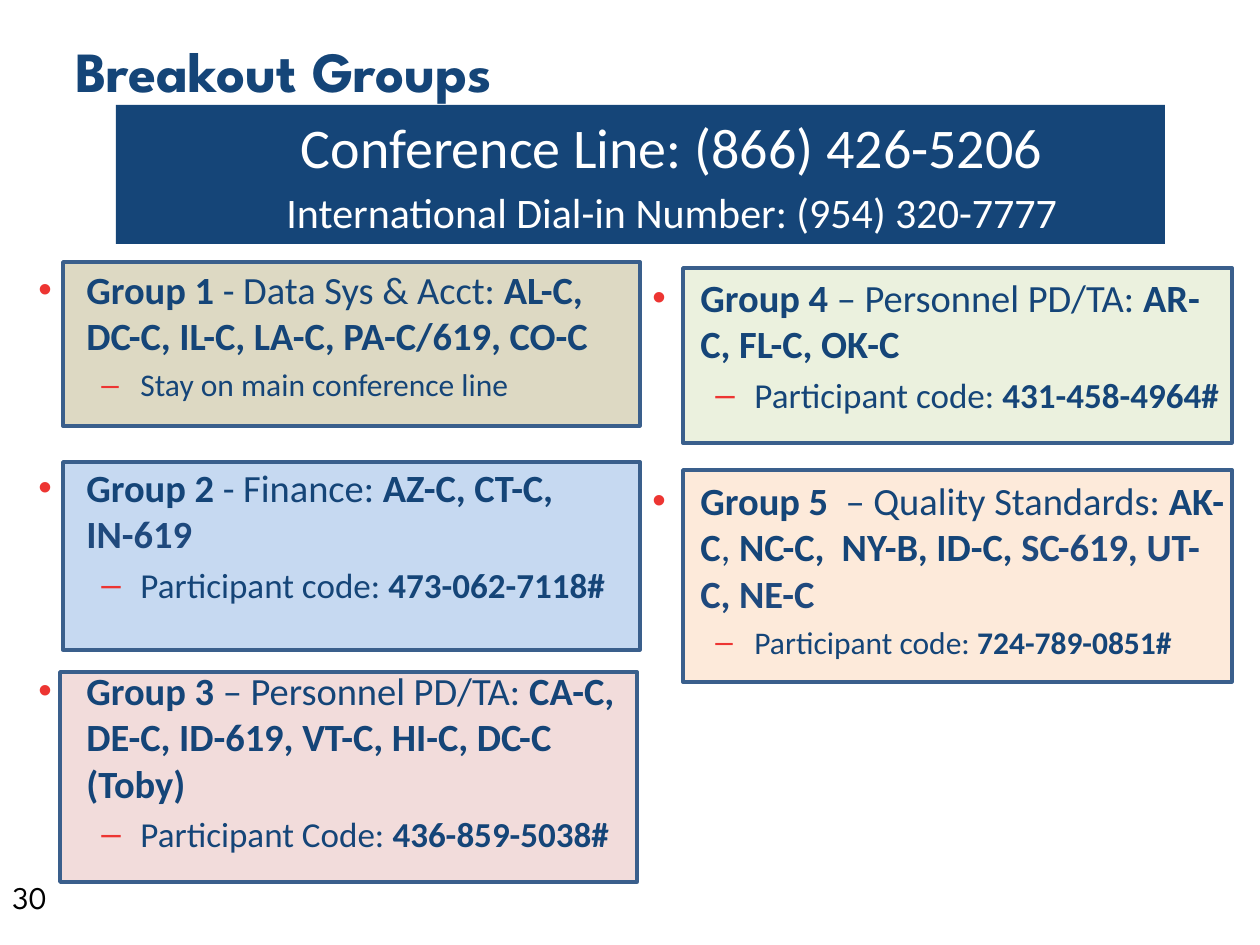
from dataclasses import dataclass

from lxml.etree import SubElement
from pptx import Presentation
from pptx.dml.color import RGBColor
from pptx.enum.shapes import MSO_SHAPE as Preset
from pptx.enum.text import MSO_ANCHOR as Anchor, PP_ALIGN as Align
from pptx.oxml.ns import qn
from pptx.util import Emu, Pt


@dataclass(frozen=True)
class Theme:
    navy: str = "154578"
    slate: str = "1F497D"
    outline: str = "3A5F8C"
    bullet: str = "ED3532"
    white: str = "FFFFFF"
    black: str = "000000"
    body_font: str = "Calibri"
    title_font: str = "League Spartan"
    title_size: float = 32.4
    line_size: int = 32
    dial_size: int = 24
    group_size: int = 22
    code_size: int = 20
    small_size: int = 18
    gap: int = 4


THEME = Theme()
PX_PER_INCH = 126
SLIDE_SIZE = (1260, 945)


def px(length):
    return Emu(round(length * 914400 / PX_PER_INCH))


def add_run(paragraph, text, size, color, bold=False, font=THEME.body_font):
    run = paragraph.add_run()
    run.text = text
    run.font.name = font
    run.font.size = Pt(size)
    run.font.bold = bold
    run.font.color.rgb = RGBColor.from_string(color)


def add_text_frame(slide, box, anchor=Anchor.TOP):
    frame = slide.shapes.add_textbox(*map(px, box)).text_frame
    frame.word_wrap = True
    frame.vertical_anchor = anchor
    return frame


def add_rectangle(slide, box, fill, outline=None):
    shape = slide.shapes.add_shape(Preset.RECTANGLE, *map(px, box))
    shape.shadow.inherit = False
    shape.fill.solid()
    shape.fill.fore_color.rgb = RGBColor.from_string(fill)
    if outline:
        shape.line.color.rgb = RGBColor.from_string(outline)
        shape.line.width = Pt(2)
    else:
        shape.line.fill.background()
    return shape


def set_indent(paragraph, left, hanging=0):
    properties = paragraph._p.get_or_add_pPr()
    properties.set("marL", str(px(left)))
    properties.set("indent", str(px(-hanging)))
    return properties


def set_bullet(paragraph, character, left, hanging):
    properties = set_indent(paragraph, left, hanging)
    color = SubElement(properties, qn("a:buClr"))
    SubElement(color, qn("a:srgbClr")).set("val", THEME.bullet)
    SubElement(properties, qn("a:buFont")).set("typeface", "Arial")
    SubElement(properties, qn("a:buChar")).set("char", character)


def add_title(slide, box, text):
    paragraph = add_text_frame(slide, box, Anchor.MIDDLE).paragraphs[0]
    add_run(paragraph, text, THEME.title_size, THEME.navy, True, THEME.title_font)


def add_page_number(slide, box, text):
    paragraph = add_text_frame(slide, box).paragraphs[0]
    add_run(paragraph, text, THEME.small_size, THEME.black, font=THEME.title_font)


def add_banner(slide, box, lines):
    frame = add_rectangle(slide, box, THEME.navy).text_frame
    frame.word_wrap = True
    frame.vertical_anchor = Anchor.MIDDLE
    for index, (text, size) in enumerate(lines):
        paragraph = frame.add_paragraph() if index else frame.paragraphs[0]
        set_indent(paragraph, 63)
        paragraph.alignment = Align.CENTER
        if index:
            paragraph.space_before = Pt(THEME.gap)
        add_run(paragraph, text, size, THEME.white)


def add_group(slide, card, text_box, fill, heading, detail, detail_size):
    add_rectangle(slide, card, fill, THEME.outline)
    frame = add_text_frame(slide, text_box)

    paragraph = frame.paragraphs[0]
    set_bullet(paragraph, "•", 48, 48)
    for text, bold, color in heading:
        add_run(paragraph, text, THEME.group_size, color, bold)

    paragraph = frame.add_paragraph()
    paragraph.level = 1
    set_bullet(paragraph, "–", 102, 39)
    paragraph.space_before = Pt(THEME.gap)
    for text, bold in detail:
        add_run(paragraph, text, detail_size, THEME.navy, bold)


def add_column(slide, left, width, groups):
    for card, text_top, fill, heading, detail, detail_size in groups:
        text_box = (left, text_top, width, card[1] + card[3] - text_top)
        add_group(slide, card, text_box, fill, heading, detail, detail_size)


def strong(text, color=THEME.navy):
    return text, True, color


def plain(text):
    return text, False, THEME.navy


def participant(code, label="Participant code: "):
    return [(label, False), (code, True)]


LEFT_GROUPS = [
    ((63, 262, 577, 164), 260, "DDD9C3",
     [strong("Group 1 "), plain("- Data Sys & Acct: "),
      strong("AL-C, DC-C, IL-C, LA-C, PA-C/619, CO-C")],
     [("Stay on main conference line", False)], THEME.small_size),
    ((63, 462, 577, 188), 458, "C6D9F1",
     [strong("Group 2 "), plain("- Finance: "), strong("AZ-C, CT-C, "),
      strong("IN-619", THEME.slate)],
     participant("473-062-7118#"), THEME.code_size),
    ((60, 672, 577, 210), 661, "F2DCDB",
     [strong("Group 3 "), plain("– Personnel PD/TA: "),
      strong("CA-C, DE-C, ID-619, VT-C, HI-C, DC-C (Toby)")],
     participant("436-859-5038#", "Participant Code: "), THEME.code_size),
]

RIGHT_GROUPS = [
    ((683, 268, 549, 175), 268, "EBF1DE",
     [strong("Group 4 "), plain("– Personnel PD/TA: "), strong("AR-C, FL-C, OK-C")],
     participant("431-458-4964#"), THEME.code_size),
    ((683, 470, 549, 212), 471, "FDEADA",
     [strong("Group 5  "), plain("– Quality Standards: "), strong("AK-C"), plain(", "),
      strong("NC-C,  NY-B, ID-C,"), strong(" SC-619, UT-C, NE-C", THEME.slate)],
     participant("724-789-0851#"), THEME.small_size),
]


def main():
    presentation = Presentation()
    presentation.slide_width, presentation.slide_height = map(px, SLIDE_SIZE)
    slide = presentation.slides.add_slide(presentation.slide_layouts[6])
    add_title(slide, (63, 38, 1134, 63), "Breakout Groups")
    add_column(slide, 26, 614, LEFT_GROUPS)
    add_column(slide, 640, 598, RIGHT_GROUPS)
    add_page_number(slide, (0, 872, 73, 50), "30")
    add_banner(slide, (116, 105, 1049, 139), [
        ("Conference Line: (866) 426-5206", THEME.line_size),
        ("International Dial-in Number: (954) 320-7777", THEME.dial_size),
    ])
    presentation.save("out.pptx")


if __name__ == "__main__":
    main()
